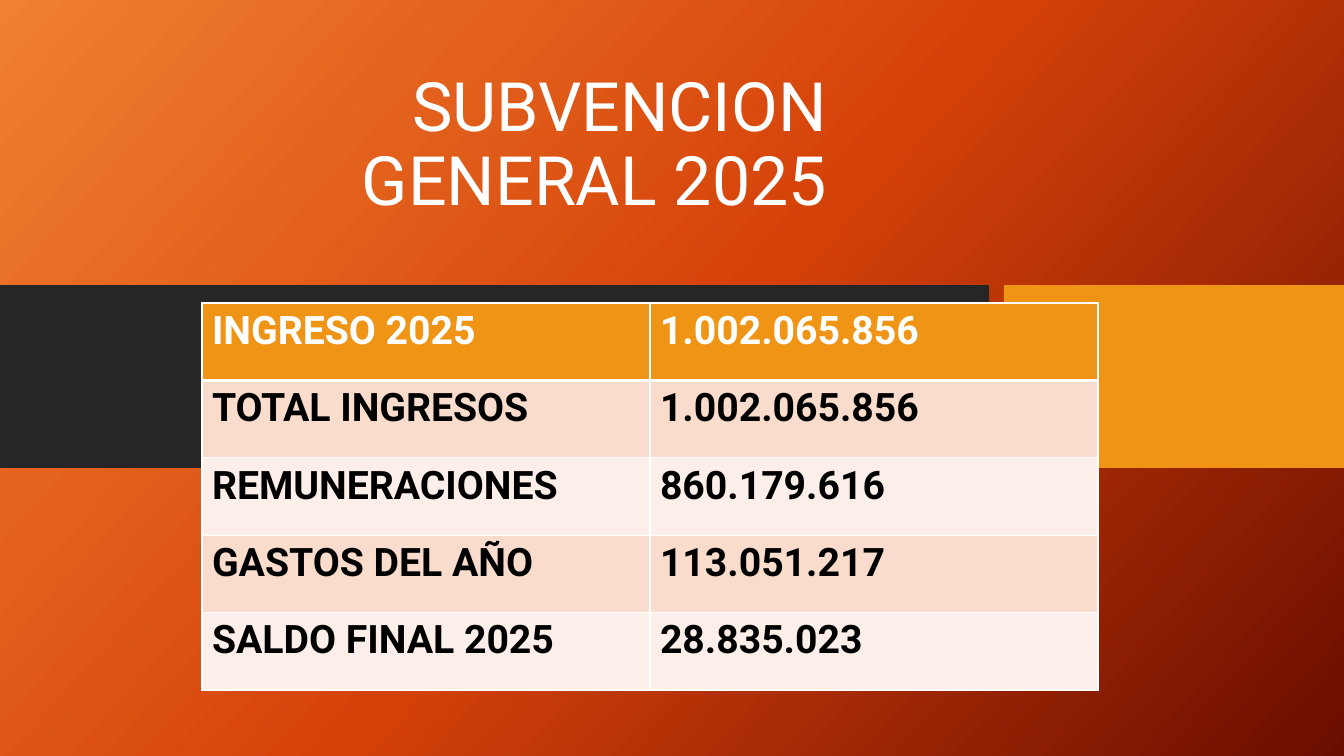
import copy
import pptx
import pptx.util
import pptx.dml.color
import pptx.enum.text
import pptx.oxml
import pptx.oxml.ns

# Content
TITLE = "SUBVENCION GENERAL 2025"
ROWS = [
    ("INGRESO 2025", "1.002.065.856"),
    ("TOTAL INGRESOS", "1.002.065.856"),
    ("REMUNERACIONES", "860.179.616"),
    ("GASTOS DEL AÑO", "113.051.217"),
    ("SALDO FINAL 2025", "28.835.023"),
]


class Theme:
    font = "Roboto"
    title, body = 48.6, 28
    white, black = "FFFFFF", "000000"
    dark, gold = "262626", "F09415"
    rows = ("FCEEE8", "F9DCCC")
    stops = ((0, "F18031"), (0.5, "D54209"), (1, "6A0D00"))
    angle = 42
    thin, thick = 1, 3


# Layout in px: left, top, width, height
SCALE = 914400 / 100.8
SLIDE = (1344, 756)
TITLE_BOX = (114, 121, 723, 104)
TABLE_BOX = (202, 303, 896, 387)
BAND_TOP, BAND_H = 285, 183
BANDS = [(0, 989, Theme.dark), (1004, 340, Theme.gold)]


def px(*vals):
    return [pptx.util.Emu(round(v * SCALE)) for v in vals]


def rgb(code):
    return pptx.dml.color.RGBColor.from_string(code)


def write(para, text, size, color, bold=False):
    run = para.add_run()
    run.text = text
    font = run.font
    font.name, font.size, font.bold = Theme.font, pptx.util.Pt(size), bold
    font.color.rgb = rgb(color)


def border(cell, head):
    props = cell._tc.get_or_add_tcPr()
    for spot, side in enumerate("LRTB"):
        wide = Theme.thick if head and side == "B" else Theme.thin
        line = pptx.oxml.parse_xml(
            f'<a:ln{side} {pptx.oxml.ns.nsdecls("a")} w="{wide * 12700}">'
            f'<a:solidFill><a:srgbClr val="{Theme.white}"/></a:solidFill>'
            f'</a:ln{side}>')
        props.insert(spot, line)


def paint(slide):
    fill = slide.background.fill
    fill.gradient()
    fill.gradient_angle = 360 - Theme.angle
    first = slide._element.xpath(".//a:gsLst/a:gs")[0]
    first.addnext(copy.deepcopy(first))
    for stop, (place, color) in zip(fill.gradient_stops, Theme.stops):
        stop.position = place
        stop.color.rgb = rgb(color)


def add_bands(slide):
    for left, width, color in BANDS:
        band = slide.shapes.add_shape(
            pptx.enum.shapes.MSO_SHAPE.RECTANGLE,
            *px(left, BAND_TOP, width, BAND_H))
        band.shadow.inherit = False
        band.fill.solid()
        band.fill.fore_color.rgb = rgb(color)
        band.line.fill.background()


def add_title(slide):
    title = slide.shapes.title
    title.left, title.top, title.width, title.height = px(*TITLE_BOX)
    frame = title.text_frame
    frame.word_wrap = True
    frame.auto_size = pptx.enum.text.MSO_AUTO_SIZE.NONE
    frame.vertical_anchor = pptx.enum.text.MSO_ANCHOR.BOTTOM
    para = frame.paragraphs[0]
    para.alignment = pptx.enum.text.PP_ALIGN.RIGHT
    para.line_spacing = 0.9
    write(para, TITLE, Theme.title, Theme.white)


def add_grid(slide):
    grid = slide.shapes.add_table(
        len(ROWS), len(ROWS[0]), *px(*TABLE_BOX)).table
    for r, row in enumerate(ROWS):
        head = r == 0
        for c, text in enumerate(row):
            cell = grid.cell(r, c)
            cell.fill.solid()
            cell.fill.fore_color.rgb = rgb(
                Theme.gold if head else Theme.rows[r % 2])
            border(cell, head)
            write(cell.text_frame.paragraphs[0], text, Theme.body,
                  Theme.white if head else Theme.black, True)


def main():
    deck = pptx.Presentation()
    deck.slide_width, deck.slide_height = px(*SLIDE)
    slide = deck.slides.add_slide(deck.slide_layouts[5])
    paint(slide)
    add_bands(slide)
    add_title(slide)
    add_grid(slide)
    deck.save("out.pptx")


if __name__ == "__main__":
    import pptx.enum.shapes
    main()
